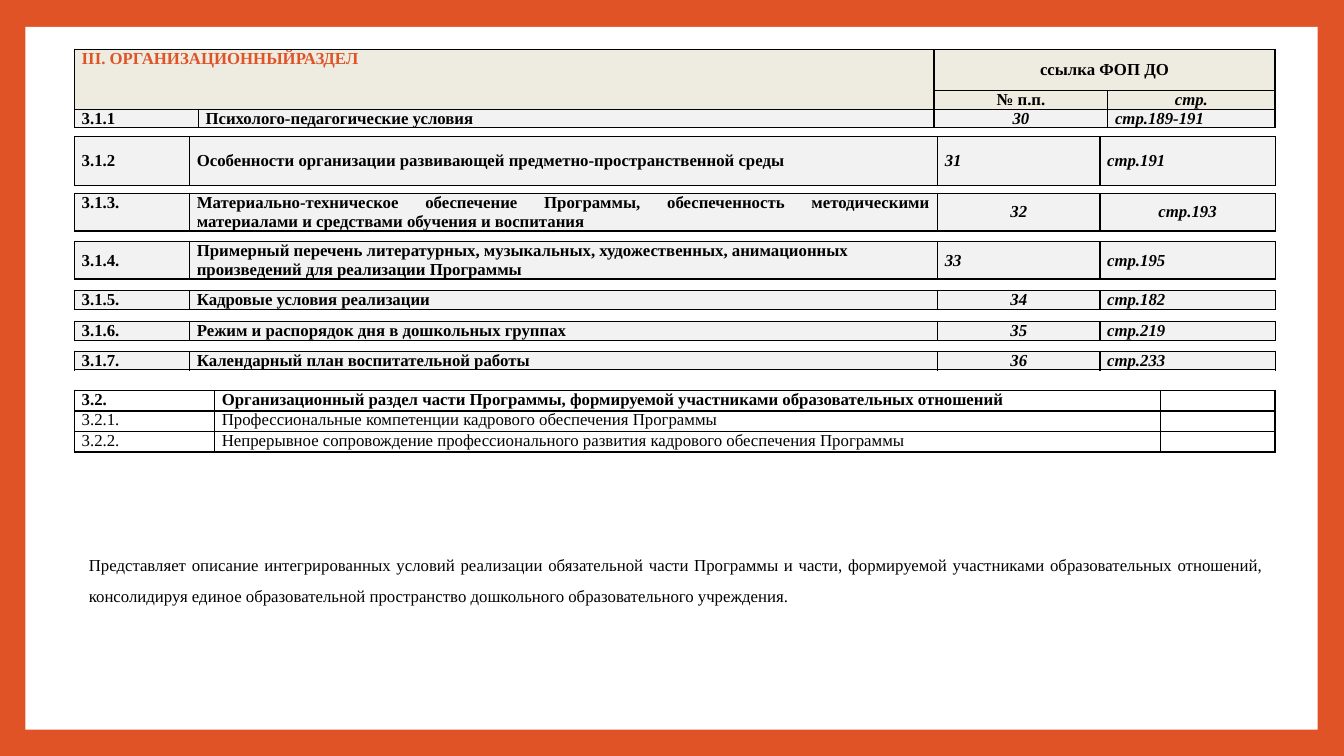
"""Build the slide listing the contents of the organisational section."""
from lxml import etree
from pptx import Presentation
from pptx.dml.color import RGBColor
from pptx.enum.shapes import MSO_SHAPE
from pptx.enum.text import MSO_ANCHOR, MSO_AUTO_SIZE, PP_ALIGN
from pptx.oxml.ns import qn
from pptx.util import Cm, Pt

LEFT, CENTER, JUSTIFY = PP_ALIGN.LEFT, PP_ALIGN.CENTER, PP_ALIGN.JUSTIFY
TOP, MIDDLE = MSO_ANCHOR.TOP, MSO_ANCHOR.MIDDLE
RECTANGLE = MSO_SHAPE.RECTANGLE

COLORS = {"orange": "DF5327", "white": "FFFFFF", "black": "000000",
          "beige": "EEECE1", "gray": "F2F2F2"}
FONT = "Times New Roman"
TABLE_LEFT = 1.88
LINE = 0.47

# style: bold, italic, alignment, anchor, text colour, fill
STYLES = {
    "section": (True, False, LEFT, TOP, "orange", "beige"),
    "heading": (True, False, CENTER, MIDDLE, "black", "beige"),
    "heading italic": (True, True, CENTER, MIDDLE, "black", "beige"),
    "label": (True, False, JUSTIFY, TOP, "black", "gray"),
    "label middle": (True, False, LEFT, MIDDLE, "black", "gray"),
    "page": (True, True, JUSTIFY, TOP, "black", "gray"),
    "page middle": (True, True, LEFT, MIDDLE, "black", "gray"),
    "page center": (True, True, CENTER, MIDDLE, "black", "gray"),
    "part": (True, False, JUSTIFY, TOP, "black", None),
    "item": (False, False, JUSTIFY, TOP, "black", None),
}
JUSTIFIED = ("label", "label", "page center", "page")
CENTERED = ("label", "label", "page center", "page center")
MIDDLED = ("label middle", "label middle", "page middle", "page middle")
HEADER = ("section", "section", "heading", "heading")
SUBHEADER = ("section", "section", "heading", "heading italic")

HEADER_COLUMNS = (3.12, 18.54, 4.38, 4.21)
COLUMNS = (2.9, 18.85, 4.09, 4.42)
PART_COLUMNS = (3.53, 23.84, 2.88)

# table: top, column widths, rows of (height, styles, texts)
TABLES = [
    (1.24, HEADER_COLUMNS, [
        (1.04, HEADER, ("III. ОРГАНИЗАЦИОННЫЙРАЗДЕЛ", "", "ссылка ФОП ДО", "")),
        (LINE, SUBHEADER, ("", "", "№ п.п.", "стр.")),
        (LINE, JUSTIFIED, ("3.1.1", "Психолого-педагогические условия", "30", "стр.189-191"))]),
    (3.44, COLUMNS, [(1.23, MIDDLED, (
        "3.1.2", "Особенности организации развивающей предметно-пространственной среды",
        "31", "стр.191"))]),
    (4.88, COLUMNS, [(2 * LINE, CENTERED, (
        "3.1.3.", "Материально-техническое обеспечение Программы, обеспеченность "
        "методическими материалами и средствами обучения и воспитания", "32", "стр.193"))]),
    (6.09, COLUMNS, [(2 * LINE, MIDDLED, (
        "3.1.4.", "Примерный перечень литературных, музыкальных, художественных, "
        "анимационных произведений для реализации Программы", "33", "стр.195"))]),
    (7.32, COLUMNS, [(LINE, JUSTIFIED, (
        "3.1.5.", "Кадровые условия реализации", "34", "стр.182"))]),
    (8.1, COLUMNS, [(LINE, JUSTIFIED, (
        "3.1.6.", "Режим и распорядок дня в дошкольных группах", "35", "стр.219"))]),
    (8.85, COLUMNS, [(LINE, JUSTIFIED, (
        "3.1.7.", "Календарный план воспитательной работы", "36", "стр.233"))]),
    (9.84, PART_COLUMNS, [
        (LINE, ("part",) * 3, (
            "3.2.", "Организационный раздел части Программы, формируемой участниками "
            "образовательных отношений", "")),
        (LINE, ("item",) * 3, (
            "3.2.1.", "Профессиональные компетенции кадрового обеспечения Программы", "")),
        (LINE, ("item",) * 3, (
            "3.2.2.", "Непрерывное сопровождение профессионального развития кадрового "
            "обеспечения Программы", ""))]),
]
SUMMARY = ("Представляет описание интегрированных условий реализации обязательной части "
           "Программы и части, формируемой участниками образовательных отношений, "
           "консолидируя единое образовательной пространство дошкольного "
           "образовательного учреждения.")


def add_run(paragraph, text, color, bold=False, italic=False):
    """Add one formatted run to the paragraph."""
    run = paragraph.add_run()
    run.text = text
    run.font.name, run.font.size = FONT, Pt(12)
    run.font.bold, run.font.italic = bold, italic
    run.font.color.rgb = RGBColor.from_string(COLORS[color])


def format_cell(cell, text, style):
    """Give the cell its borders, fill, margins and text."""
    bold, italic, alignment, anchor, color, fill = STYLES[style]
    cell.margin_left = cell.margin_right = Cm(0.18)
    cell.margin_top = cell.margin_bottom = 0
    cell.vertical_anchor = anchor
    properties = cell._tc.get_or_add_tcPr()
    for side in ("a:lnL", "a:lnR", "a:lnT", "a:lnB"):
        border = etree.SubElement(properties, qn(side), w=str(Pt(1)))
        solid = etree.SubElement(border, qn("a:solidFill"))
        etree.SubElement(solid, qn("a:srgbClr"), val=COLORS["black"])
    if fill:
        cell.fill.solid()
        cell.fill.fore_color.rgb = RGBColor.from_string(COLORS[fill])
    else:
        cell.fill.background()
    paragraph = cell.text_frame.paragraphs[0]
    paragraph.alignment = alignment
    if text:
        add_run(paragraph, text, color, bold, italic)
    else:
        etree.SubElement(paragraph._p, qn("a:endParaRPr"), sz="1200")


presentation = Presentation()
presentation.slide_width, presentation.slide_height = Cm(33.87), Cm(19.05)
slide = presentation.slides.add_slide(presentation.slide_layouts[6])
slide.background.fill.solid()
slide.background.fill.fore_color.rgb = RGBColor.from_string(COLORS["orange"])

panel = slide.shapes.add_shape(RECTANGLE, Cm(0.64), Cm(0.68), Cm(32.57), Cm(17.71))
panel.shadow.inherit = False
panel.fill.solid()
panel.fill.fore_color.rgb = RGBColor.from_string(COLORS["white"])
panel.line.fill.background()

for top, widths, rows in TABLES:
    height = sum(row[0] for row in rows)
    table = slide.shapes.add_table(len(rows), len(widths), Cm(TABLE_LEFT), Cm(top),
                                   Cm(sum(widths)), Cm(height)).table
    table.first_row = table.horz_banding = False
    for column, width in zip(table.columns, widths):
        column.width = Cm(width)
    for row, (row_height, styles, texts) in zip(table.rows, rows):
        row.height = Cm(row_height)
        for cell, text, style in zip(row.cells, texts, styles):
            format_cell(cell, text, style)
    if widths == HEADER_COLUMNS:
        table.cell(0, 0).merge(table.cell(1, 1))
        table.cell(0, 2).merge(table.cell(0, 3))

summary = slide.shapes.add_textbox(Cm(1.35), Cm(13.61), Cm(30.76), Cm(1.7))
frame = summary.text_frame
frame.word_wrap = True
frame.auto_size = MSO_AUTO_SIZE.SHAPE_TO_FIT_TEXT
frame.margin_left = Cm(0.89)
paragraph = frame.paragraphs[0]
paragraph.alignment = JUSTIFY
paragraph.line_spacing = 1.5
paragraph.space_before = Pt(14)
add_run(paragraph, SUMMARY, "black")

presentation.save("out.pptx")
